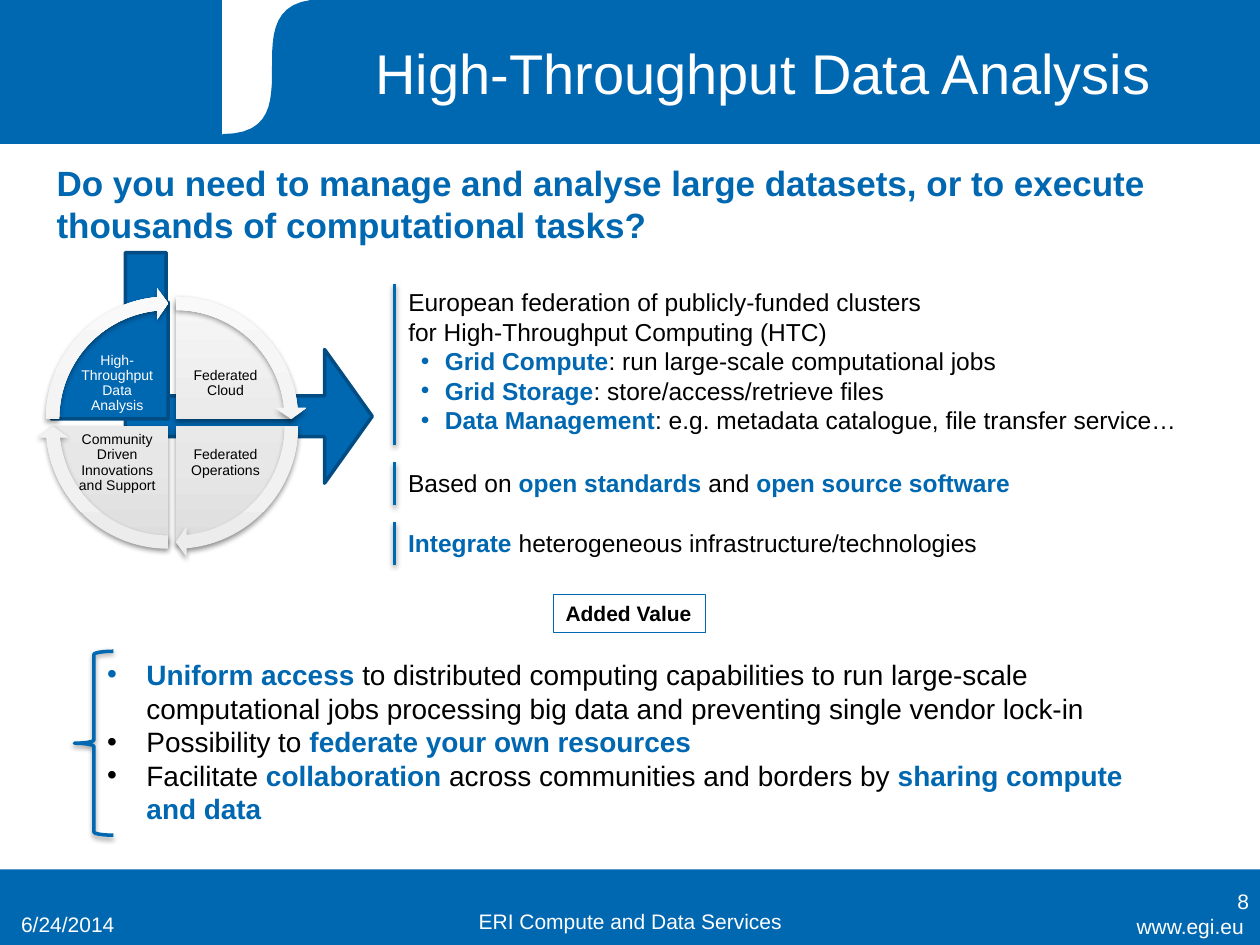
from copy import deepcopy

from pptx import Presentation
from pptx.dml.color import RGBColor
from pptx.enum import shapes, text
from pptx.oxml import parse_xml
from pptx.oxml.ns import nsdecls, qn
from pptx.util import Pt

BLUE, NAVY, WHITE, BLACK = "0067B1", "004C83", "FFFFFF", "000000"
PIE_GREYS = ["DDDDDD", "E7E7E7", "F6F6F6"]
ARROW_GREYS = ["ECECEC", "F1F1F1", "F9F9F9"]
SHAPE = shapes.MSO_SHAPE
LEFT, CENTER, RIGHT = text.PP_ALIGN.LEFT, text.PP_ALIGN.CENTER, text.PP_ALIGN.RIGHT
TOP, MIDDLE, BOTTOM = text.MSO_ANCHOR.TOP, text.MSO_ANCHOR.MIDDLE, text.MSO_ANCHOR.BOTTOM

SERVICES = [
    (False, [("European federation of publicly-funded clusters", False)]),
    (False, [("for High-Throughput Computing (HTC)", False)]),
    (True, [("Grid Compute", True), (": run large-scale computational jobs", False)]),
    (True, [("Grid Storage", True), (": store/access/retrieve files", False)]),
    (True, [("Data Management", True),
            (": e.g. metadata catalogue, file transfer service…", False)]),
]
STANDARDS = [(False, [("Based on ", False), ("open standards", True), (" and ", False),
                      ("open source software", True)])]
INTEGRATION = [(False, [("Integrate ", True),
                        ("heterogeneous infrastructure/technologies", False)])]
BENEFITS = [
    (True, [("Uniform access ", True),
            ("to distributed computing capabilities to run large-scale computational jobs "
             "processing big data and preventing single vendor lock-in", False)]),
    (True, [("Possibility to ", False), ("federate your own resources", True)]),
    (True, [("Facilitate ", False), ("collaboration ", True),
            ("across communities and borders by ", False),
            ("sharing compute and data", True)]),
]
QUADRANTS = [
    ("Federated Cloud", 1, 0, 162),
    ("Federated Operations", 1, 1, 0),
    ("Community Driven Innovations and Support", 0, 1, 54),
    ("High-Throughput Data Analysis", 0, 0, 108),
]


def rgb(color):
    return RGBColor.from_string(color)


def place(shape, box):
    shape.left, shape.top, shape.width, shape.height = map(Pt, box)


def format_run(run, size, color, bold=False):
    run.font.name = "Arial"
    run.font.size = Pt(size)
    run.font.bold = bold
    run.font.color.rgb = rgb(color)


def set_text(shape, words, size, color, align=LEFT, anchor=TOP, bold=False, spacing=1):
    frame = shape.text_frame
    frame.word_wrap = True
    frame.auto_size = text.MSO_AUTO_SIZE.NONE
    frame.vertical_anchor = anchor
    frame.text = words
    paragraph = frame.paragraphs[0]
    paragraph.alignment = align
    paragraph.line_spacing = spacing
    format_run(paragraph.runs[0], size, color, bold)


def add_label(slide, box, words, size, color, **options):
    label = slide.shapes.add_textbox(*map(Pt, box))
    set_text(label, words, size, color, **options)
    return label


def set_bullet(paragraph, bulleted, margin, hanging):
    properties = paragraph._p.get_or_add_pPr()
    properties.set("marL", str(Pt(margin if bulleted else 0)))
    properties.set("indent", str(Pt(-hanging if bulleted else 0)))
    tag = 'a:buChar char="•"' if bulleted else "a:buNone"
    name = tag.split()[0]
    properties.append(parse_xml(f"<{tag} {nsdecls('a')}></{name}>"))


def set_rich_text(shape, paragraphs, size, margin=0, hanging=0):
    frame = shape.text_frame
    frame.word_wrap = True
    frame.auto_size = text.MSO_AUTO_SIZE.NONE
    for index, (bulleted, parts) in enumerate(paragraphs):
        paragraph = frame.add_paragraph() if index else frame.paragraphs[0]
        set_bullet(paragraph, bulleted, margin, hanging)
        paragraph.space_before = Pt(0)
        for words, strong in parts:
            run = paragraph.add_run()
            run.text = words
            format_run(run, size, BLUE if strong else BLACK, strong)


def add_shadow(shape):
    shape._element.spPr.append(parse_xml(
        f'<a:effectLst {nsdecls("a")}><a:outerShdw blurRad="{Pt(3.1)}" dist="{Pt(1.6)}" '
        'dir="5400000" rotWithShape="0"><a:srgbClr val="000000"><a:alpha val="38000"/>'
        '</a:srgbClr></a:outerShdw></a:effectLst>'))


def style_shape(shape, fill=None, line=None, width=0.75):
    if fill:
        shape.fill.solid()
        shape.fill.fore_color.rgb = rgb(fill)
    else:
        shape.fill.background()
    if line:
        shape.line.color.rgb = rgb(line)
        shape.line.width = Pt(width)
    else:
        shape.line.fill.background()


def add_shape(slide, kind, box, fill=None, line=None, width=0.75, adjustments=()):
    shape = slide.shapes.add_shape(kind, *map(Pt, box))
    for index, value in enumerate(adjustments):
        shape.adjustments[index] = value
    style_shape(shape, fill, line, width)
    shape.shadow.inherit = False
    return shape


def add_grey_shape(slide, kind, box, greys, adjustments):
    shape = slide.shapes.add_shape(kind, *map(Pt, box))
    for index, value in enumerate(adjustments):
        shape.adjustments[index] = value
    shape.line.fill.background()
    shape.fill.gradient()
    shape.fill.gradient_angle = 90
    stops = shape._element.spPr.find(".//" + qn("a:gsLst"))
    stops.insert(1, deepcopy(stops[0]))
    for stop, position, grey in zip(shape.fill.gradient_stops, (0, 0.35, 1), greys):
        stop.position = position
        stop.color.rgb = rgb(grey)
    add_shadow(shape)


def add_bar(slide, top, bottom):
    x = Pt(225.4)
    bar = slide.shapes.add_connector(shapes.MSO_CONNECTOR.STRAIGHT, x, Pt(top), x, Pt(bottom))
    bar.line.color.rgb = rgb(BLUE)
    bar.line.width = Pt(2)
    add_shadow(bar)


def add_header_and_footer(slide):
    add_shape(slide, SHAPE.RECTANGLE, (0, 496.8, 720, 43.2), BLUE)
    add_shape(slide, SHAPE.RECTANGLE, (0, 0, 720, 82), BLUE, BLUE)
    left, right, bottom, bend = 127.4, 269.3, 77, 184.3
    add_shape(slide, SHAPE.RECTANGLE, (left, 0, right - left, bottom), WHITE, WHITE)
    curve = []
    for step in range(1, 25):
        t = step / 24
        s = 1 - t
        curve.append((Pt(left * (s**3 + 3 * s * t**2) + bend * (3 * s**2 * t + t**3)),
                      Pt(bottom * (s**3 + 3 * s**2 * t))))
    builder = slide.shapes.build_freeform(Pt(right), 0)
    builder.add_line_segments([(Pt(right), Pt(bottom)), (Pt(left), Pt(bottom))] + curve)
    swoosh = builder.convert_to_shape()
    style_shape(swoosh, BLUE, BLUE)
    swoosh.shadow.inherit = False
    for box, words, align, anchor in [
        ((604.1, 518.4, 113.8, 22.3), "www.egi.eu", RIGHT, TOP),
        ((5, 509.8, 167.8, 28.8), "6/24/2014", LEFT, BOTTOM),
        ((246.2, 508.3, 228.2, 28.8), "ERI Compute and Data Services", CENTER, BOTTOM),
        ((553, 500.4, 167.8, 28.8), "8", RIGHT, MIDDLE),
    ]:
        add_label(slide, box, words, 12, WHITE, align=align, anchor=anchor)


def add_wheel(slide):
    pie, ring, overhang, gap = 133.2, 149.8, 8.3, 4.3
    corners = [(29.5 + gap * column, 172.8 + gap * row) for _, column, row, _ in QUADRANTS]
    for (words, column, row, start), (x, y) in zip(QUADRANTS, corners):
        box, angles = (x, y, pie, pie), (start, (start + 54) % 216)
        active = (column, row) == (0, 0)
        if active:
            add_shape(slide, SHAPE.PIE, box, BLUE, NAVY, 2, angles)
        else:
            add_grey_shape(slide, SHAPE.PIE, box, PIE_GREYS, angles)
        label = add_label(slide, (42.5 + 61.9 * column, 200.9 + 45.3 * row, 49, 36.7), words, 8,
                          WHITE if active else BLACK, align=CENTER, anchor=MIDDLE, spacing=0.9)
        frame = label.text_frame
        frame.margin_left = frame.margin_right = frame.margin_top = frame.margin_bottom = Pt(0.7)
    for (_, _, _, start), (x, y) in zip(QUADRANTS, corners):
        add_grey_shape(slide, SHAPE.CIRCULAR_ARROW, (x - overhang, y - overhang, ring, ring),
                       ARROW_GREYS, (0.051, 3.275, start + 50.725, start, 0.059))


def main():
    presentation = Presentation()
    presentation.slide_width, presentation.slide_height = Pt(720), Pt(540)
    slide = presentation.slides.add_slide(presentation.slide_layouts[3])
    title, services, benefits = slide.placeholders
    add_header_and_footer(slide)
    tree = slide.shapes._spTree
    for placeholder in (title, services, benefits):
        tree.append(placeholder._element)
    place(title, (167, 9.4, 538.6, 68.4))
    set_text(title, "High-Throughput Data Analysis", 32, WHITE, CENTER, MIDDLE, spacing=0.9)
    add_label(slide, (25.2, 88.6, 663.1, 55.4),
              "Do you need to manage and analyse large datasets, or to execute thousands of "
              "computational tasks?", 20, BLUE, bold=True)
    place(services, (226.1, 160.6, 462.2, 92.2))
    set_rich_text(services, SERVICES, 14, 20.9, 13.7)
    add_bar(slide, 162, 254.2)
    for top, statement in ((264.2, STANDARDS), (298.1, INTEGRATION)):
        box = slide.shapes.add_textbox(Pt(226.1), Pt(top), Pt(462.2), Pt(24.5))
        set_rich_text(box, statement, 14)
        add_bar(slide, top, top + 24.5)
    added_value = add_shape(slide, SHAPE.RECTANGLE, (316.1, 339.8, 87.1, 21.6), WHITE, BLUE, 0.25)
    set_text(added_value, "Added Value", 12, BLACK, bold=True)
    added_value.text_frame.word_wrap = False
    place(benefits, (54, 372.2, 623.5, 105.1))
    set_rich_text(benefits, BENEFITS, 16, 22.5, 22.5)
    arrow = add_shape(slide, SHAPE.BENT_UP_ARROW, (76.3, 139.7, 131.8, 141.1), BLUE, NAVY, 2,
                      (0.177, 0.29, 0.207))
    arrow.rotation = 270
    for flip in ("flipH", "flipV"):
        arrow._element.spPr.xfrm.set(flip, "1")
    add_wheel(slide)
    brace = slide.shapes.add_shape(SHAPE.LEFT_BRACE, Pt(42.5), Pt(372.2), Pt(22.3), Pt(105.1))
    style_shape(brace, line=BLUE, width=2)
    add_shadow(brace)
    presentation.save("out.pptx")


if __name__ == "__main__":
    main()
